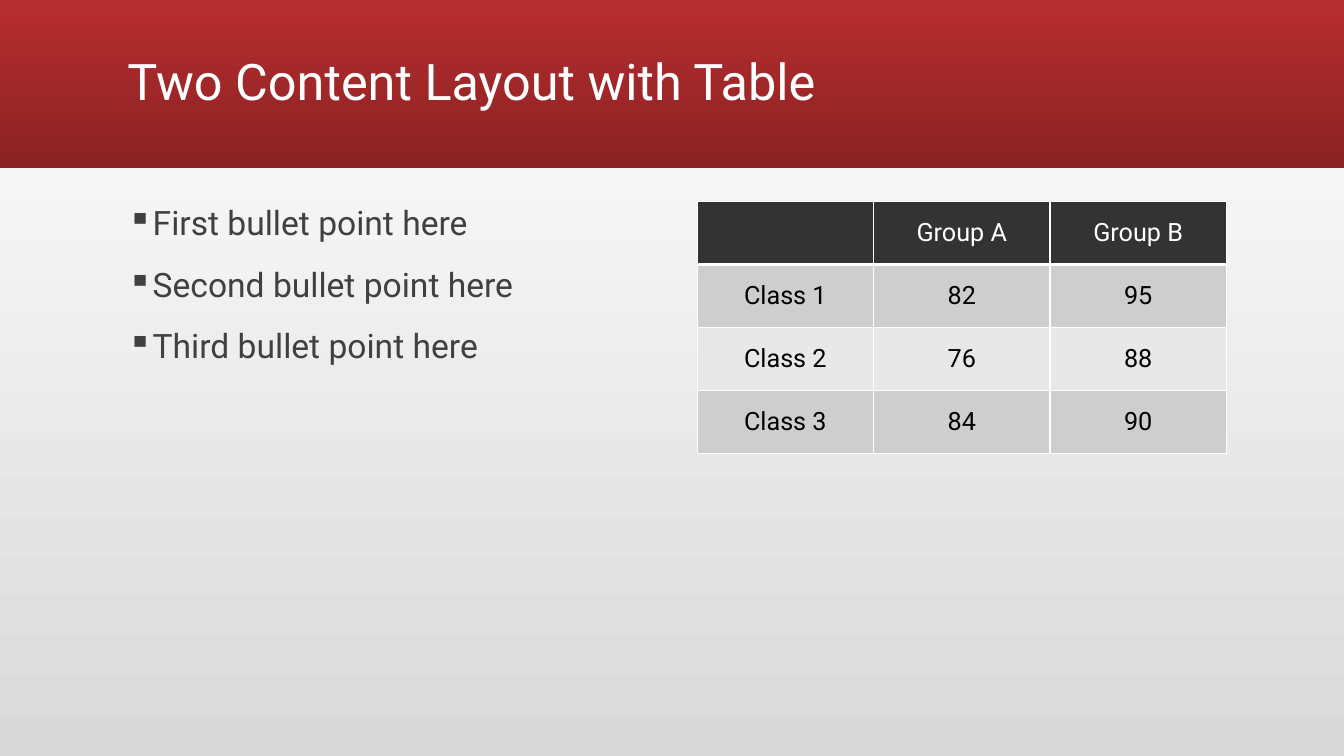
from lxml import etree
from pptx import Presentation
from pptx.dml.color import RGBColor
from pptx.enum.shapes import MSO_SHAPE
from pptx.enum.text import MSO_ANCHOR, PP_ALIGN
from pptx.oxml.ns import qn
from pptx.util import Emu, Inches, Pt

RECT = MSO_SHAPE.RECTANGLE
MIDDLE = MSO_ANCHOR.MIDDLE
TOP = MSO_ANCHOR.TOP
LEFT = PP_ALIGN.LEFT
CENTER = PP_ALIGN.CENTER

STEP = Inches(1) // 12
COLS, ROWS = 160, 90
FONT = "Roboto"
WHITE = "FFFFFF"

POINTS = ["First bullet point here", "Second bullet point here", "Third bullet point here"]
SCORES = [
    ["", "Group A", "Group B"],
    ["Class 1", "82", "95"],
    ["Class 2", "76", "88"],
    ["Class 3", "84", "90"],
]


def color(code):
    return RGBColor.from_string(code)


def grid(*units):
    return [Emu(round(unit * STEP)) for unit in units]


def blend(fill, angle, *codes):
    fill.gradient()
    fill.gradient_angle = angle
    for stop, code in zip(fill.gradient_stops, codes):
        stop.color.rgb = color(code)


def write(para, text, size=18, ink=WHITE, align=LEFT, line=1.0, before=0):
    para.alignment = align
    para.line_spacing = line
    para.space_before = Pt(before)
    run = para.add_run()
    run.text = text
    run.font.name = FONT
    run.font.size = Pt(size)
    run.font.bold = False
    run.font.color.rgb = color(ink)


def bullet(para, sign):
    props = para._p.get_or_add_pPr()
    props.set("marL", str(Inches(0.25)))
    props.set("indent", str(-Inches(0.25)))
    etree.SubElement(props, qn("a:buChar")).set("char", sign)


def add_band(slide, box):
    band = slide.shapes.add_shape(RECT, *grid(*box))
    band.shadow.inherit = False
    band.line.fill.background()
    blend(band.fill, 270, "B82D2F", "8A2223")


def add_text(slide, box, lines, anchor=TOP, sign=None, **style):
    frame = slide.shapes.add_textbox(*grid(*box)).text_frame
    frame.word_wrap = True
    frame.vertical_anchor = anchor
    for row, text in enumerate(lines):
        para = frame.add_paragraph() if row else frame.paragraphs[0]
        write(para, text, **style)
        if sign:
            bullet(para, sign)


def edge(cell, widths):
    props = cell._tc.get_or_add_tcPr()
    for place, (side, width) in enumerate(widths.items()):
        line = etree.Element(qn(f"a:ln{side}"), w=str(Pt(width)))
        fill = etree.SubElement(line, qn("a:solidFill"))
        etree.SubElement(fill, qn("a:srgbClr")).set("val", WHITE)
        props.insert(place, line)


def add_table(slide, box, data):
    table = slide.shapes.add_table(len(data), len(data[0]), *grid(*box)).table
    for row, texts in enumerate(data):
        head = row == 0
        shade = "333333" if head else ("E8E8E8", "CECECE")[row % 2]
        for col, text in enumerate(texts):
            cell = table.cell(row, col)
            cell.vertical_anchor = MIDDLE
            cell.fill.solid()
            cell.fill.fore_color.rgb = color(shade)
            edge(cell, {"L": 1, "R": 1, "T": 3 if row == 1 else 1, "B": 3 if head else 1})
            if text:
                ink = WHITE if head else "000000"
                write(cell.text_frame.paragraphs[0], text, ink=ink, align=CENTER)


def main():
    deck = Presentation()
    deck.slide_width, deck.slide_height = grid(COLS, ROWS)
    slide = deck.slides.add_slide(deck.slide_layouts[6])
    blend(slide.background.fill, 90, "D9D9D9", WHITE)
    add_band(slide, (0, 0, COLS, 20))
    add_text(slide, (14, 1.3, 132, 17.4), ["Two Content Layout with Table"],
             anchor=MIDDLE, size=36, line=0.9)
    add_text(slide, (14, 24, 63, 60), POINTS,
             sign="▪", size=24, ink="404040", line=0.9, before=18)
    add_table(slide, (83, 24, 63, 30), SCORES)
    deck.save("out.pptx")


if __name__ == "__main__":
    main()
